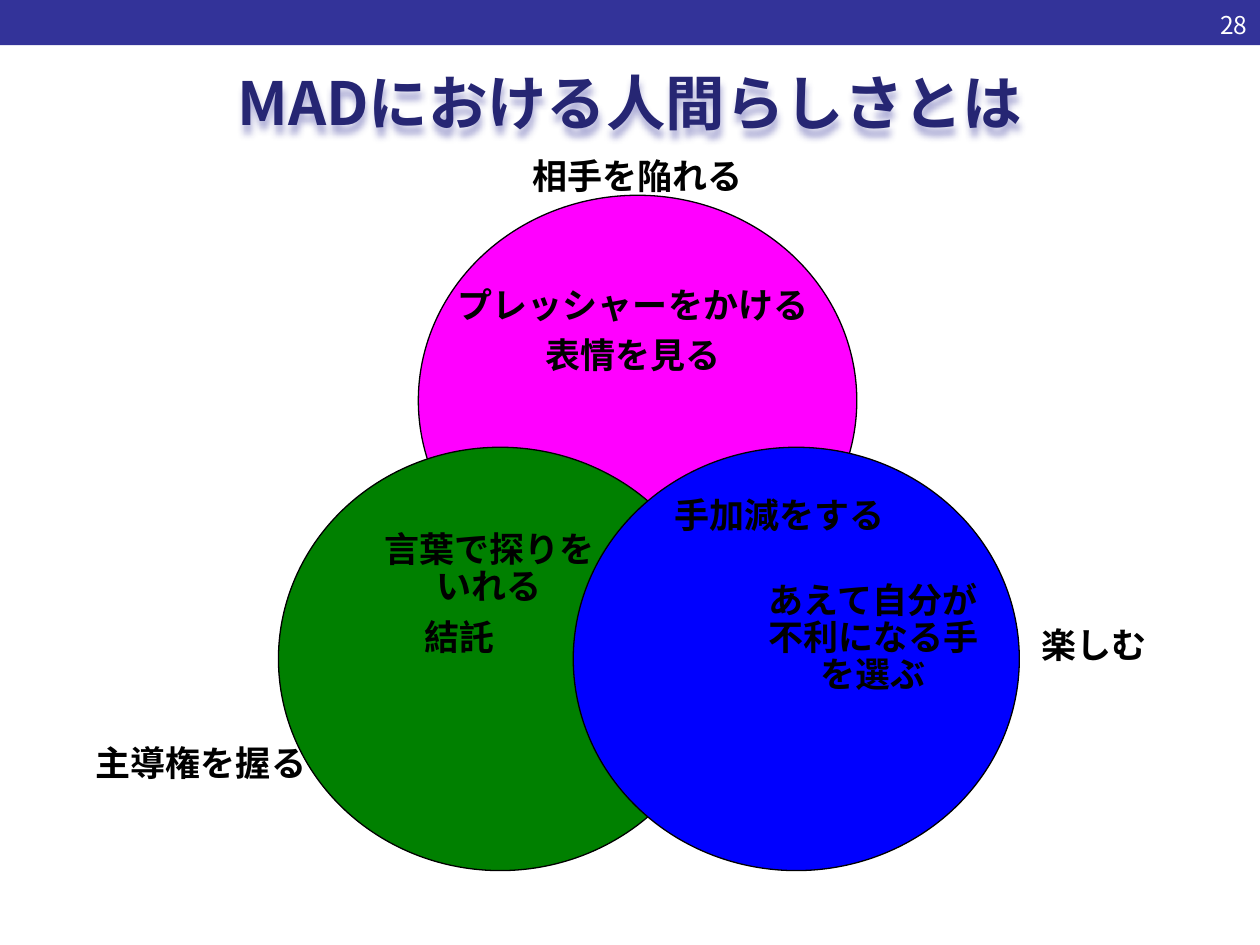
from lxml.etree import SubElement
from pptx import Presentation
from pptx.dml.color import RGBColor
from pptx.enum.shapes import MSO_SHAPE
from pptx.enum.text import MSO_ANCHOR, PP_ALIGN
from pptx.oxml.ns import qn
from pptx.util import Inches, Pt

FONT = "Noto Sans CJK JP"
deck = Presentation()
deck.slide_width, deck.slide_height = Inches(10), Inches(7.5)
page = deck.slides.add_slide(deck.slide_layouts[6])
column = deck.slide_width / 100
row = deck.slide_height / 75


def add_shape(kind, place, fill, line=None):
    left, top, width, height = place
    shape = page.shapes.add_shape(kind, round(left * column), round(top * row),
                                  round(width * column), round(height * row))
    shape.shadow.inherit = False
    shape.fill.solid()
    shape.fill.fore_color.rgb = RGBColor.from_string(fill)
    if line:
        shape.line.color.rgb = RGBColor.from_string(line)
        shape.line.width = Pt(0.75)
    else:
        shape.line.fill.background()


def add_text(text, place, size, color, bold=True, align=PP_ALIGN.CENTER, anchor=MSO_ANCHOR.BOTTOM):
    left, top, width, height = place
    box = page.shapes.add_textbox(round(left * column), round(top * row),
                                  round(width * column), round(height * row))
    frame = box.text_frame
    frame.word_wrap = True
    frame.vertical_anchor = anchor
    para = frame.paragraphs[0]
    para.alignment = align
    span = para.add_run()
    span.text = text
    span.font.name = FONT
    span.font.size = Pt(size)
    span.font.bold = bold
    span.font.color.rgb = RGBColor.from_string(color)
    SubElement(span.font._element, qn("a:ea"), typeface=FONT)
    return box


add_shape(MSO_SHAPE.RECTANGLE, (0, 0, 100, 3.6), "333399")

title = add_text("MADにおける人間らしさとは", (0, 3.5, 100, 7.9), 34, "262673")
effects = SubElement(title._element.spPr, qn("a:effectLst"))
shadow = SubElement(effects, qn("a:outerShdw"), blurRad="50800", dist="50800",
                    dir="5400000", algn="t", rotWithShape="0")
shade = SubElement(shadow, qn("a:srgbClr"), val="333399")
SubElement(shade, qn("a:alpha"), val="40000")

add_text("28", (92.6, 0.3, 7.4, 3.1), 14, "FFFFFF", False, PP_ALIGN.RIGHT, MSO_ANCHOR.TOP)

circles = [
    ((33.2, 15.5, 34.8, 32.6), "FF00FF"),
    ((22.1, 35.5, 35.2, 33.6), "008000"),
    ((45.5, 35.5, 35.4, 33.6), "0000FF"),
]
for place, fill in circles:
    add_shape(MSO_SHAPE.OVAL, place, fill, "000000")

labels = [
    ("プレッシャーをかける", (34.6, 20.2, 31.3, 5.6)),
    ("表情を見る", (34.6, 25.8, 31.3, 4)),
    ("結託", (27.4, 46, 18.1, 6.2)),
    ("あえて自分が不利になる手を選ぶ", (60.7, 46, 17.2, 9.1)),
    ("手加減をする", (50.6, 38.7, 22.6, 3.8)),
    ("言葉で探りをいれる", (29.6, 38.7, 18.5, 9.4)),
    ("相手を陥れる", (41.3, 10.8, 18.6, 4.8)),
    ("主導権を握る", (6.7, 58.1, 18.5, 4.1)),
    ("楽しむ", (81, 48.1, 11.7, 4.7)),
]
for text, place in labels:
    frame = add_text(text, place, 20, "000000").text_frame
    frame.margin_left = frame.margin_right = frame.margin_bottom = 0
    frame.margin_top = round(0.4 * row)
    frame.paragraphs[0].line_spacing = Pt(21)

deck.save("out.pptx")
